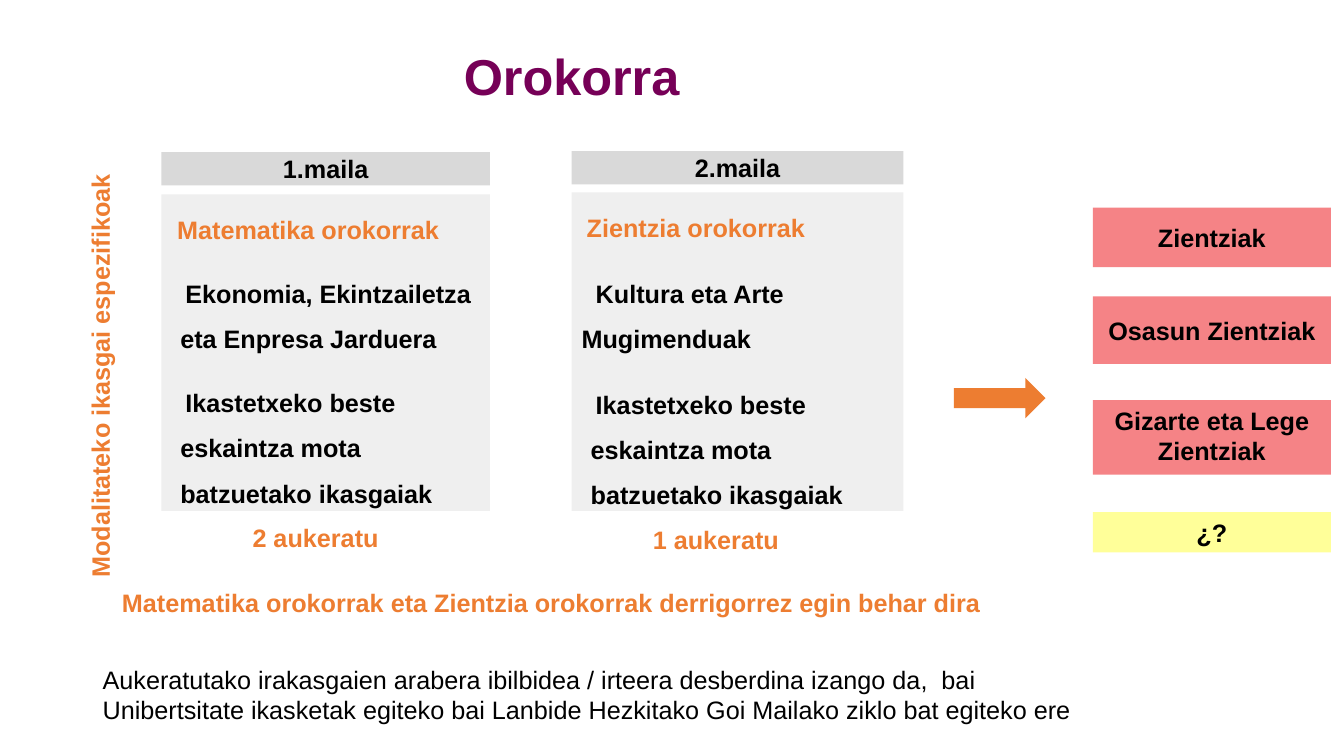
import pptx
import pptx.dml.color
import pptx.enum.shapes
import pptx.enum.text
import pptx.util

Inches = pptx.util.Inches
Pt = pptx.util.Pt
Shapes = pptx.enum.shapes.MSO_SHAPE
Align = pptx.enum.text.PP_ALIGN
Anchor = pptx.enum.text.MSO_ANCHOR

ORANGE = "ED7D31"
PURPLE = "760057"
BLACK = "000000"
HEADER_GREY = "D9D9D9"
CARD_GREY = "EFEFEF"
PINK = "F58386"
YELLOW = "FFFF99"


def color(hex_string):
    return pptx.dml.color.RGBColor.from_string(hex_string)


class SlideBuilder:
    font = "Arial"
    size = 18

    def __init__(self, slide):
        self.slide = slide

    def prepare(self, shape, anchor):
        frame = shape.text_frame
        frame.word_wrap = True
        frame.auto_size = pptx.enum.text.MSO_AUTO_SIZE.NONE
        frame.vertical_anchor = anchor
        return frame

    def add_text(self, paragraph, text, hex_string, bold=True, size=None, align=Align.CENTER):
        paragraph.alignment = align
        run = paragraph.add_run()
        run.text = text
        run.font.name = self.font
        run.font.size = Pt(size or self.size)
        run.font.bold = bold
        run.font.color.rgb = color(hex_string)

    def title(self, text, left, top, width, height):
        shape = self.slide.shapes.title
        shape.left, shape.top = Inches(left), Inches(top)
        shape.width, shape.height = Inches(width), Inches(height)
        frame = self.prepare(shape, Anchor.TOP)
        self.add_text(frame.paragraphs[0], text, PURPLE, size=36)

    def label(self, text, left, top, width, height, hex_string=ORANGE, **style):
        shape = self.slide.shapes.add_textbox(
            Inches(left), Inches(top), Inches(width), Inches(height))
        frame = self.prepare(shape, Anchor.TOP)
        self.add_text(frame.paragraphs[0], text, hex_string, **style)
        return shape

    def block(self, left, top, width, height, fill, kind=Shapes.RECTANGLE):
        shape = self.slide.shapes.add_shape(
            kind, Inches(left), Inches(top), Inches(width), Inches(height))
        shape.shadow.inherit = False
        shape.fill.solid()
        shape.fill.fore_color.rgb = color(fill)
        shape.line.fill.background()
        return shape

    def box(self, text, left, top, width, height, fill, anchor=Anchor.MIDDLE):
        shape = self.block(left, top, width, height, fill)
        frame = self.prepare(shape, anchor)
        self.add_text(frame.paragraphs[0], text, BLACK)

    def card(self, items, left, top, width, height, space_before):
        shape = self.block(left, top, width, height, CARD_GREY)
        frame = self.prepare(shape, Anchor.TOP)
        for index, (text, margin, indent) in enumerate(items):
            paragraph = frame.add_paragraph() if index else frame.paragraphs[0]
            paragraph.line_spacing = 1.5
            paragraph.space_before = Pt(space_before if index else 0)
            self.add_text(paragraph, text, BLACK if index else ORANGE, align=Align.LEFT)
            properties = paragraph._p.get_or_add_pPr()
            properties.set("marL", str(Inches(margin)))
            properties.set("indent", str(Inches(indent)))


def main():
    presentation = pptx.Presentation()
    presentation.slide_width = Inches(13.33)
    presentation.slide_height = Inches(7.5)
    builder = SlideBuilder(presentation.slides.add_slide(presentation.slide_layouts[5]))

    builder.title("Orokorra", 4.24, 0.4, 2.86, 0.57)

    other_subjects = ("Ikastetxeko beste eskaintza mota batzuetako ikasgaiak", 0.09, 0.05)
    years = [
        ("1.maila", 1.6, 1.51, 3.26, 1.93, 13, [
            ("Matematika orokorrak", 0, 0.06),
            ("Ekonomia, Ekintzailetza eta Enpresa Jarduera", 0.09, 0.05),
            other_subjects]),
        ("2.maila", 5.67, 1.5, 3.29, 1.91, 14.4, [
            ("Zientzia orokorrak", 0, 0.05),
            ("Kultura eta Arte Mugimenduak", 0, 0.14),
            other_subjects]),
    ]
    card_bottom = 5.07
    for name, left, top, width, card_top, space_before, items in years:
        builder.box(name, left, top, width, 0.33, HEADER_GREY)
        builder.card(items, left, card_top, width, card_bottom - card_top, space_before)

    builder.label("2 aukeratu", 1.6, 5.13, 3.06, 0.46)
    builder.label("1 aukeratu", 5.51, 5.15, 3.18, 0.41)
    rule = builder.label("Matematika orokorrak eta Zientzia orokorrak derrigorrez egin behar dira",
                         1.04, 5.78, 9.43, 0.46, align=Align.LEFT)
    rule.text_frame.margin_left = Inches(0.17)
    builder.label("Aukeratutako irakasgaien arabera ibilbidea / irteera desberdina izango da,  bai "
                  "Unibertsitate ikasketak egiteko bai Lanbide Hezkitako Goi Mailako ziklo bat "
                  "egiteko ere", 0.92, 6.54, 10, 0.71, BLACK, bold=False, align=Align.LEFT)

    side_label = builder.label("Modalitateko ikasgai espezifikoak",
                               -1.2, 3.53, 4.48, 0.5, align=Align.LEFT)
    side_label.rotation = 270
    side_label.text_frame.margin_left = Inches(0.29)

    builder.block(9.46, 3.75, 0.91, 0.4, ORANGE, Shapes.RIGHT_ARROW)

    outcomes = [
        ("Zientziak", 2.06, 0.59, PINK, Anchor.MIDDLE),
        ("Osasun Zientziak", 2.94, 0.67, PINK, Anchor.MIDDLE),
        ("Gizarte eta Lege Zientziak", 3.97, 0.74, PINK, Anchor.TOP),
        ("¿?", 5.08, 0.4, YELLOW, Anchor.TOP),
    ]
    for text, top, height, fill, anchor in outcomes:
        builder.box(text, 10.84, top, 2.36, height, fill, anchor)

    presentation.save("out.pptx")


if __name__ == "__main__":
    main()
